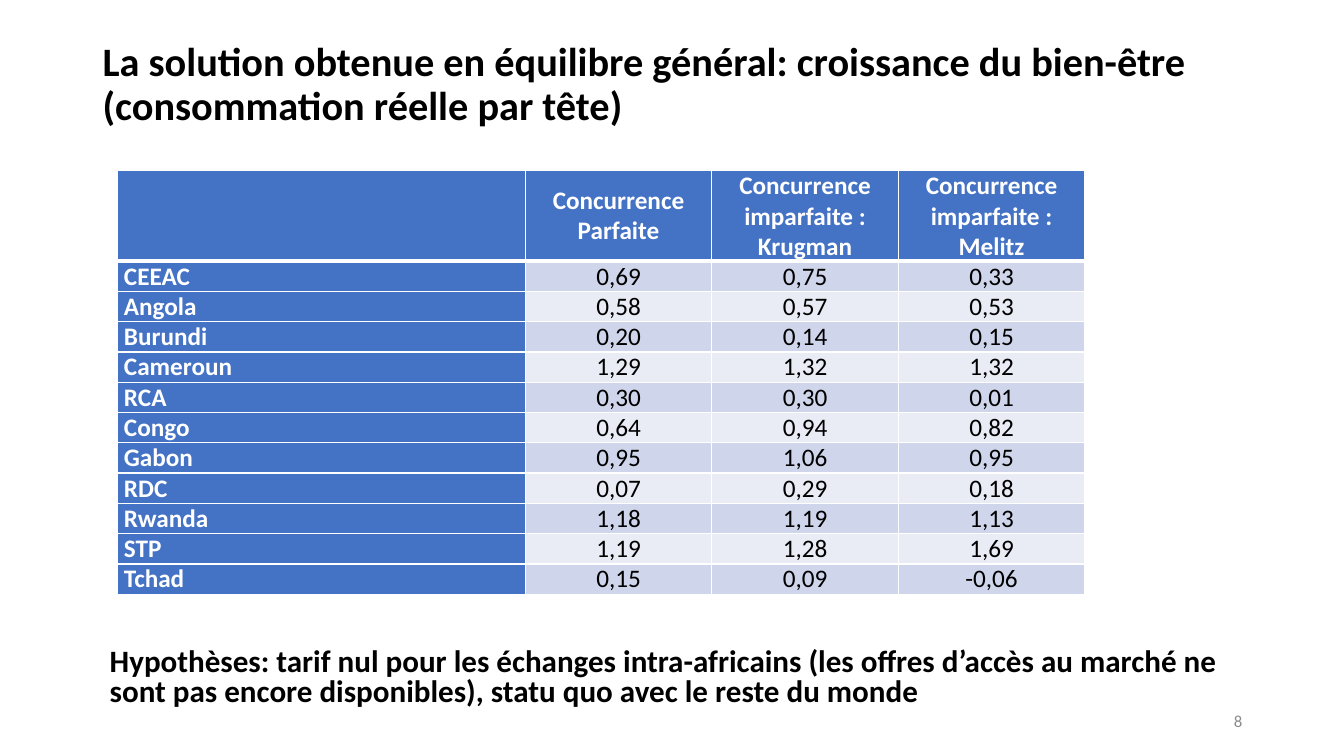
from dataclasses import dataclass

from lxml import etree
from pptx import Presentation
from pptx.dml.color import RGBColor
from pptx.enum.text import MSO_ANCHOR, PP_ALIGN
from pptx.oxml.ns import qn
from pptx.util import Inches, Pt

LEFT, CENTER, RIGHT = PP_ALIGN.LEFT, PP_ALIGN.CENTER, PP_ALIGN.RIGHT
TOP, MIDDLE = MSO_ANCHOR.TOP, MSO_ANCHOR.MIDDLE


@dataclass(frozen=True)
class Theme:
    font: str = "Calibri"
    black: str = "000000"
    white: str = "FFFFFF"
    gray: str = "8C8C8C"
    blue: str = "4472C4"
    bands: tuple = ("CFD5EA", "E9EBF5")
    title_size: float = 28.8
    note_size: float = 22.2
    table_size: float = 18
    number_size: float = 12
    thin_border: float = 1
    thick_border: float = 3


TITLE = (
    "La solution obtenue en équilibre général: croissance du bien-être "
    "(consommation réelle par tête)"
)
ASSUMPTIONS = (
    "Hypothèses: tarif nul pour les échanges intra-africains (les offres "
    "d’accès au marché ne sont pas encore disponibles), statu quo avec le "
    "reste du monde"
)
WELFARE_ROWS = [
    ("", "Concurrence Parfaite", "Concurrence imparfaite : Krugman",
     "Concurrence imparfaite : Melitz"),
    ("CEEAC", "0,69", "0,75", "0,33"),
    ("Angola", "0,58", "0,57", "0,53"),
    ("Burundi", "0,20", "0,14", "0,15"),
    ("Cameroun", "1,29", "1,32", "1,32"),
    ("RCA", "0,30", "0,30", "0,01"),
    ("Congo", "0,64", "0,94", "0,82"),
    ("Gabon", "0,95", "1,06", "0,95"),
    ("RDC", "0,07", "0,29", "0,18"),
    ("Rwanda", "1,18", "1,19", "1,13"),
    ("STP", "1,19", "1,28", "1,69"),
    ("Tchad", "0,15", "0,09", "-0,06"),
]
COLUMN_WIDTHS = [4.05, 1.85, 1.85, 1.85]
ROW_HEIGHTS = [0.74] + [0.25] * (len(WELFARE_ROWS) - 1)


class SlideBuilder:
    def __init__(self, slide, theme):
        self.slide = slide
        self.theme = theme

    def run(self, paragraph, text, size, color, bold, alignment):
        paragraph.alignment = alignment
        run = paragraph.add_run()
        run.text = text
        run.font.name = self.theme.font
        run.font.size = Pt(size)
        run.font.bold = bold
        run.font.color.rgb = RGBColor.from_string(color)

    def text(self, box, text, size, color, bold=True, alignment=LEFT, spacing=1.0):
        shape = self.slide.shapes.add_textbox(*map(Inches, box))
        frame = shape.text_frame
        frame.word_wrap = True
        frame.vertical_anchor = MIDDLE
        paragraph = frame.paragraphs[0]
        paragraph.line_spacing = spacing
        self.run(paragraph, text, size, color, bold, alignment)

    def borders(self, cell, row_index):
        theme = self.theme
        thick_side = {0: "lnB", 1: "lnT"}.get(row_index)
        properties = cell._tc.get_or_add_tcPr()
        for side in ("lnL", "lnR", "lnT", "lnB"):
            width = theme.thick_border if side == thick_side else theme.thin_border
            line = etree.SubElement(properties, qn(f"a:{side}"), w=str(Pt(width)))
            fill = etree.SubElement(line, qn("a:solidFill"))
            etree.SubElement(fill, qn("a:srgbClr"), val=theme.white)

    def cell(self, cell, text, row_index, column_index):
        theme = self.theme
        heading = row_index == 0 or column_index == 0
        fill_color = theme.blue if heading else theme.bands[(row_index - 1) % 2]
        self.borders(cell, row_index)
        cell.fill.solid()
        cell.fill.fore_color.rgb = RGBColor.from_string(fill_color)
        cell.margin_left = cell.margin_right = Inches(0.07)
        cell.margin_top = cell.margin_bottom = Inches(0)
        cell.vertical_anchor = MIDDLE if column_index < 2 else TOP
        if text:
            paragraph = cell.text_frame.paragraphs[0]
            paragraph.space_before = Pt(6)
            color = theme.white if heading else theme.black
            alignment = CENTER if column_index else LEFT
            self.run(paragraph, text, theme.table_size, color, heading, alignment)

    def table(self, left, top, rows, widths, heights):
        shape = self.slide.shapes.add_table(
            len(rows), len(widths), Inches(left), Inches(top),
            Inches(sum(widths)), Inches(sum(heights)),
        )
        table = shape.table
        table.first_col = True
        for column, width in zip(table.columns, widths):
            column.width = Inches(width)
        for row, height in zip(table.rows, heights):
            row.height = Inches(height)
        for row_index, values in enumerate(rows):
            for column_index, text in enumerate(values):
                self.cell(table.cell(row_index, column_index), text,
                          row_index, column_index)


def main():
    theme = Theme()
    presentation = Presentation()
    presentation.slide_width = Inches(13.33)
    presentation.slide_height = Inches(7.5)
    slide = presentation.slides.add_slide(presentation.slide_layouts[6])
    builder = SlideBuilder(slide, theme)
    builder.text((0.92, 0.4, 11.5, 0.89), TITLE, theme.title_size,
                 theme.black, spacing=0.9)
    builder.table(1.16, 1.69, WELFARE_ROWS, COLUMN_WIDTHS, ROW_HEIGHTS)
    builder.text((0.99, 6.36, 11.5, 0.74), ASSUMPTIONS, theme.note_size,
                 theme.black, spacing=0.8)
    builder.text((9.42, 6.95, 3, 0.4), "8", theme.number_size,
                 theme.gray, bold=False, alignment=RIGHT)
    presentation.save("out.pptx")


if __name__ == "__main__":
    main()
